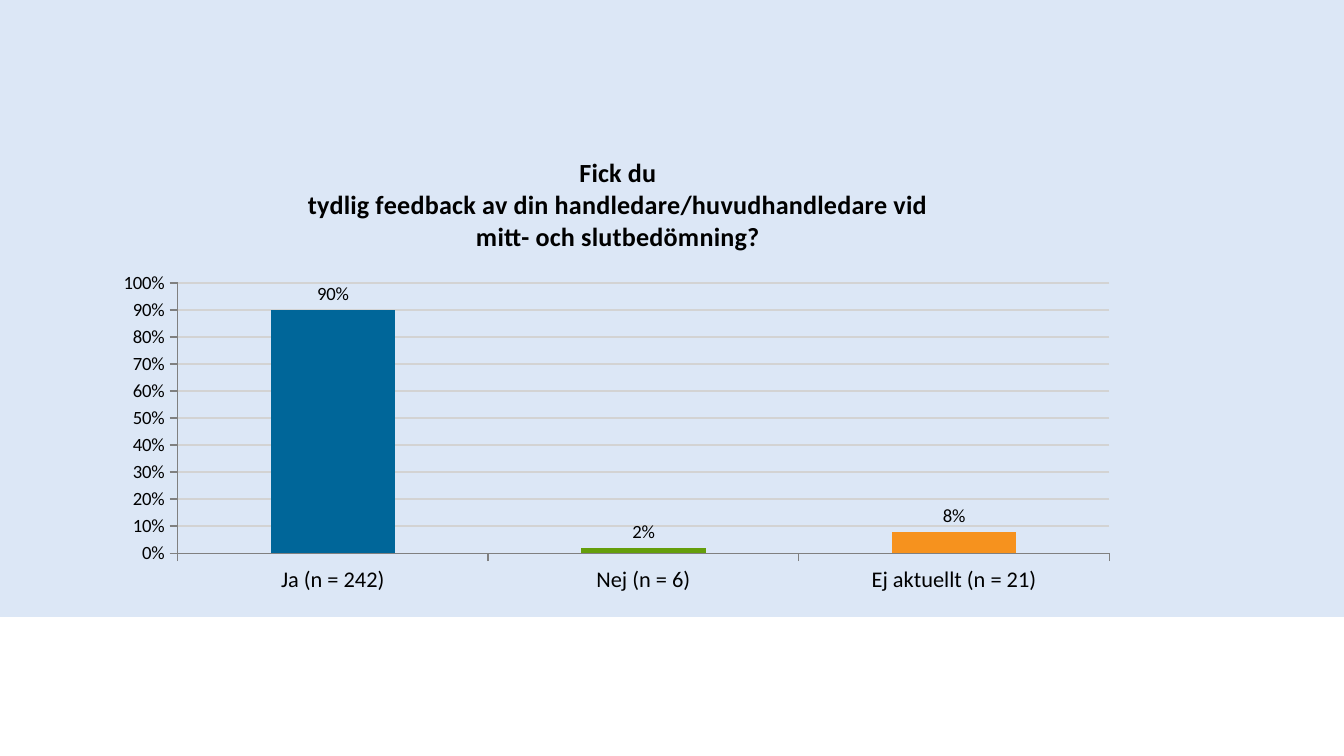
from lxml.etree import SubElement
from pptx import Presentation
from pptx.chart.data import CategoryChartData
from pptx.dml.color import RGBColor
from pptx.enum.chart import XL_CHART_TYPE, XL_LABEL_POSITION, XL_TICK_MARK
from pptx.enum.shapes import MSO_SHAPE
from pptx.enum.text import PP_ALIGN
from pptx.oxml.ns import qn
from pptx.util import Pt

BLACK = RGBColor(0x00, 0x00, 0x00)
PALE_BLUE = RGBColor(0xDC, 0xE7, 0xF6)
GRID_GRAY = RGBColor(0xD3, 0xD3, 0xD3)
AXIS_GRAY = RGBColor(0x80, 0x80, 0x80)
BLUE = RGBColor(0x00, 0x66, 0x99)
GREEN = RGBColor(0x64, 0x9E, 0x0B)
ORANGE = RGBColor(0xF6, 0x92, 0x1E)

FONT = "Calibri"
TITLE = [
    "Fick du",
    "tydlig feedback av din handledare/huvudhandledare vid",
    "mitt- och slutbedömning?",
]
ANSWERS = [
    ("Ja (n = 242)", 0.9, BLUE),
    ("Nej (n = 6)", 0.02, GREEN),
    ("Ej aktuellt (n = 21)", 0.08, ORANGE),
]
SLIDE_SIZE = (1344, 756)
PANEL = (0, 0, 1344, 617)
CHART = (106, 134, 1024, 466)
PLOT = {"x": 0.07, "y": 0.32, "w": 0.91, "h": 0.58}


def px(length):
    return round(length * 914400 / 134.4)


def set_font(font, size, bold=False, color=BLACK):
    font.name = FONT
    font.size = Pt(size)
    font.bold = bold
    font.color.rgb = color


def write_text(text_frame, lines, size, bold=False, color=BLACK, align=PP_ALIGN.CENTER):
    for index, line in enumerate(lines):
        paragraph = text_frame.paragraphs[0] if index == 0 else text_frame.add_paragraph()
        paragraph.alignment = align
        run = paragraph.add_run()
        run.text = line
        set_font(run.font, size, bold, color)


def style_axis(axis, size):
    axis.major_tick_mark = XL_TICK_MARK.OUTSIDE
    axis.minor_tick_mark = XL_TICK_MARK.NONE
    axis.format.line.color.rgb = AXIS_GRAY
    axis.format.line.width = Pt(0.75)
    set_font(axis.tick_labels.font, size)


def place_plot(chart):
    plot_area = chart.plots[0]._element.getparent()
    layout = plot_area.find(qn("c:layout"))
    if layout is None:
        layout = SubElement(plot_area, qn("c:layout"))
        plot_area.insert(0, layout)
    manual = SubElement(layout, qn("c:manualLayout"))
    settings = {"layoutTarget": "inner", "xMode": "edge", "yMode": "edge", **PLOT}
    for name, value in settings.items():
        SubElement(manual, qn(f"c:{name}")).set("val", str(value))


def add_answer_chart(slide):
    data = CategoryChartData(number_format="0%")
    data.categories = [name for name, _, _ in ANSWERS]
    data.add_series("Series 1", [share for _, share, _ in ANSWERS])
    chart = slide.shapes.add_chart(
        XL_CHART_TYPE.COLUMN_CLUSTERED, *map(px, CHART), data
    ).chart
    set_font(chart.font, 18)
    chart.has_legend = False
    chart.has_title = True
    write_text(chart.chart_title.text_frame, TITLE, size=14, bold=True)
    chart.chart_title.include_in_layout = False

    style_axis(chart.category_axis, 12)
    value_axis = chart.value_axis
    style_axis(value_axis, 10)
    value_axis.minimum_scale = 0
    value_axis.maximum_scale = 1
    value_axis.major_unit = 0.1
    value_axis.tick_labels.number_format = "0%"
    value_axis.tick_labels.number_format_is_linked = False
    value_axis.has_major_gridlines = True
    value_axis.major_gridlines.format.line.color.rgb = GRID_GRAY
    value_axis.major_gridlines.format.line.width = Pt(0.75)

    plot = chart.plots[0]
    plot.gap_width = 150
    plot.vary_by_categories = False
    series = plot.series[0]
    series.format.fill.solid()
    series.format.fill.fore_color.rgb = BLUE
    for index, (_, _, color) in enumerate(ANSWERS):
        fill = series.points[index].format.fill
        fill.solid()
        fill.fore_color.rgb = color
    labels = series.data_labels
    labels.show_value = True
    labels.position = XL_LABEL_POSITION.OUTSIDE_END
    labels.number_format = "0%"
    labels.number_format_is_linked = False
    set_font(labels.font, 10)
    place_plot(chart)


def main():
    presentation = Presentation()
    presentation.slide_width, presentation.slide_height = map(px, SLIDE_SIZE)
    slide = presentation.slides.add_slide(presentation.slide_layouts[6])
    panel = slide.shapes.add_shape(MSO_SHAPE.RECTANGLE, *map(px, PANEL))
    panel.shadow.inherit = False
    panel.fill.solid()
    panel.fill.fore_color.rgb = PALE_BLUE
    panel.line.fill.background()
    add_answer_chart(slide)
    presentation.save("out.pptx")


if __name__ == "__main__":
    main()
